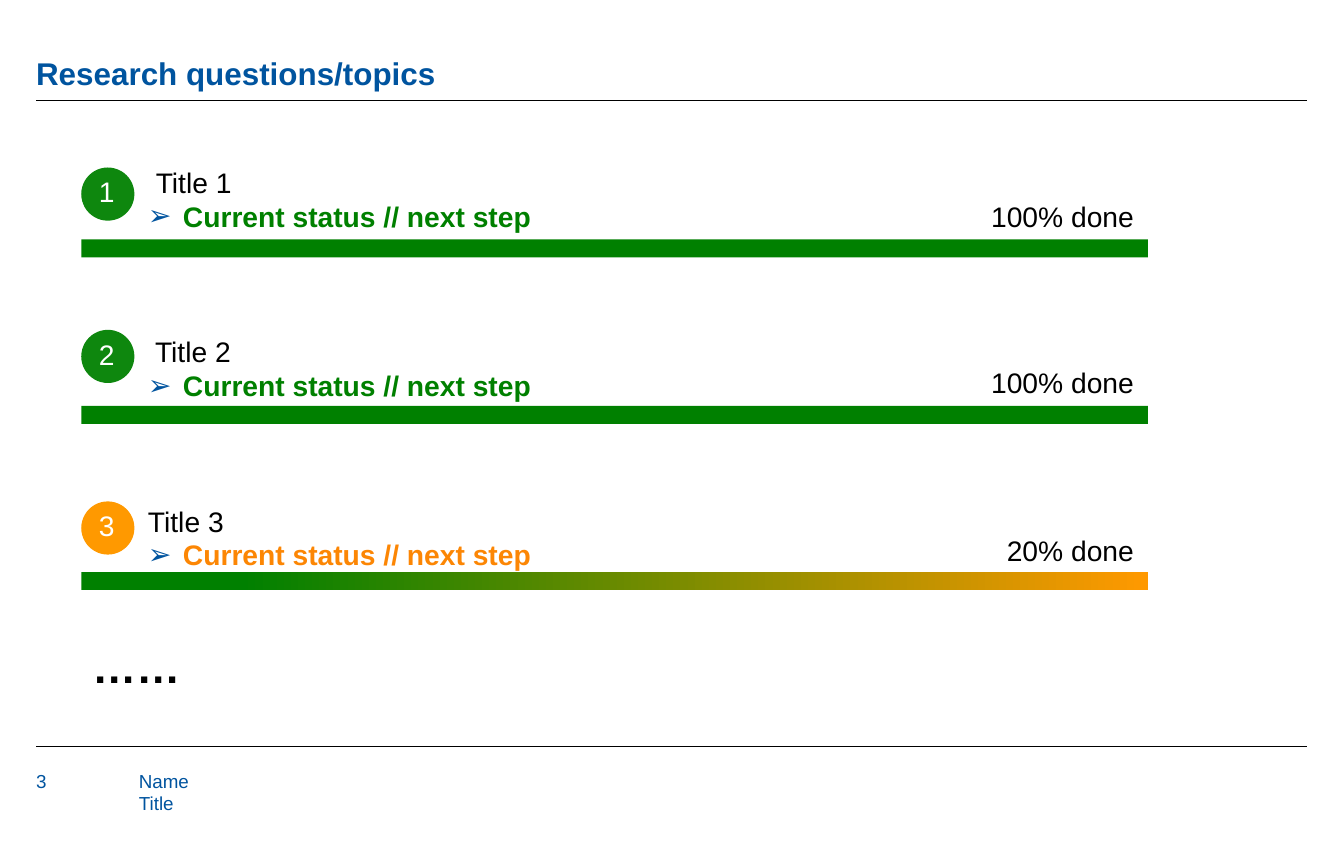
from dataclasses import dataclass

from lxml import etree
from pptx import Presentation
from pptx.dml.color import RGBColor
from pptx.enum.shapes import MSO_CONNECTOR, MSO_SHAPE
from pptx.enum.text import MSO_ANCHOR, PP_ALIGN
from pptx.oxml.ns import qn
from pptx.shapes.autoshape import Shape
from pptx.slide import Slide
from pptx.text.text import TextFrame, _Paragraph
from pptx.util import Pt

STRAIGHT = MSO_CONNECTOR.STRAIGHT
RECTANGLE, OVAL = MSO_SHAPE.RECTANGLE, MSO_SHAPE.OVAL
TOP, MIDDLE, BOTTOM = MSO_ANCHOR.TOP, MSO_ANCHOR.MIDDLE, MSO_ANCHOR.BOTTOM
LEFT, CENTER, RIGHT = PP_ALIGN.LEFT, PP_ALIGN.CENTER, PP_ALIGN.RIGHT


@dataclass(frozen=True)
class Theme:
    font: str = "Arial"
    blue: str = "00549F"
    black: str = "000000"
    white: str = "FFFFFF"
    green: str = "008000"
    badge_green: str = "0E870E"
    orange: str = "FF9900"
    status_orange: str = "FC8604"
    heading_size: float = 20
    body_size: float = 18
    ellipsis_size: float = 28
    footer_size: float = 12


THEME = Theme()


@dataclass(frozen=True)
class Box:
    left: float
    top: float
    width: float
    height: float

    def lengths(self) -> tuple[Pt, Pt, Pt, Pt]:
        return Pt(self.left), Pt(self.top), Pt(self.width), Pt(self.height)


@dataclass(frozen=True)
class Topic:
    number: int
    title: str
    title_indent: float
    status_color: str
    badge_color: str
    badge_top: float
    progress: str
    progress_top: float
    finished: bool


STATUS = "Current status // next step"
TOPICS = (
    Topic(1, "Title 1", 5, THEME.green, THEME.badge_green, 106.8, "100% done", 123.4, True),
    Topic(2, "Title 2", 4.5, THEME.green, THEME.badge_green, 210.3, "100% done", 229, True),
    Topic(3, "Title 3", 0, THEME.status_orange, THEME.orange, 319.7, "20% done", 336.2, False),
)

SLIDE_WIDTH, SLIDE_HEIGHT = 857.25, 540
CONTENT_LEFT = 51.84
MARGIN_LEFT, MARGIN_RIGHT = 23.04, 833.76
TEXT_LEFT, TEXT_TOP, TEXT_PITCH = 94.4, 105.4, 107.9
BAR_TOP, BAR_PITCH = 152.6, 106.2
BADGE_SIZE = 33.9
BULLET_INDENT = 22.3


def remove_insets(text_frame: TextFrame) -> None:
    text_frame.margin_left = text_frame.margin_right = 0
    text_frame.margin_top = text_frame.margin_bottom = 0


def format_runs(paragraph: _Paragraph, size: float, color: str, bold: bool = False) -> None:
    for run in paragraph.runs:
        run.font.name = THEME.font
        run.font.size = Pt(size)
        run.font.bold = bold
        run.font.color.rgb = RGBColor.from_string(color)


def add_text(slide: Slide, box: Box, text: str, size: float, color: str, bold: bool = False,
             align: PP_ALIGN = LEFT, anchor: MSO_ANCHOR = TOP) -> TextFrame:
    text_frame = slide.shapes.add_textbox(*box.lengths()).text_frame
    remove_insets(text_frame)
    text_frame.word_wrap = True
    text_frame.vertical_anchor = anchor
    text_frame.text = text
    for paragraph in text_frame.paragraphs:
        paragraph.alignment = align
        format_runs(paragraph, size, color, bold)
    return text_frame


def add_plain_shape(slide: Slide, kind: MSO_SHAPE, box: Box, color: str) -> Shape:
    shape = slide.shapes.add_shape(kind, *box.lengths())
    shape.shadow.inherit = False
    shape.line.fill.background()
    shape.fill.solid()
    shape.fill.fore_color.rgb = RGBColor.from_string(color)
    return shape


def add_rule(slide: Slide, top: float) -> None:
    line = slide.shapes.add_connector(STRAIGHT, Pt(MARGIN_LEFT), Pt(top), Pt(MARGIN_RIGHT), Pt(top))
    line.line.color.rgb = RGBColor.from_string(THEME.black)
    line.line.width = Pt(0.5)
    etree.SubElement(line._element.spPr, qn("a:effectLst"))


def indent(paragraph: _Paragraph, margin: float, first_line: float = 0) -> None:
    properties = paragraph._p.get_or_add_pPr()
    properties.set("marL", str(Pt(margin)))
    properties.set("indent", str(Pt(first_line)))


def add_arrow_bullet(paragraph: _Paragraph) -> None:
    indent(paragraph, BULLET_INDENT, -BULLET_INDENT)
    properties = paragraph._p.get_or_add_pPr()
    bullet_color = etree.SubElement(properties, qn("a:buClr"))
    etree.SubElement(bullet_color, qn("a:srgbClr"), val=THEME.blue)
    etree.SubElement(properties, qn("a:buFont"), typeface=THEME.font)
    etree.SubElement(properties, qn("a:buChar"), char="➢")


def add_badge(slide: Slide, topic: Topic) -> None:
    box = Box(CONTENT_LEFT, topic.badge_top, BADGE_SIZE, BADGE_SIZE)
    badge = add_plain_shape(slide, OVAL, box, topic.badge_color)
    text_frame = badge.text_frame
    remove_insets(text_frame)
    text_frame.margin_right = Pt(1.3)
    text_frame.margin_bottom = Pt(3.4)
    text_frame.word_wrap = False
    text_frame.vertical_anchor = MIDDLE
    text_frame.text = str(topic.number)
    text_frame.paragraphs[0].alignment = CENTER
    format_runs(text_frame.paragraphs[0], THEME.body_size, THEME.white)


def add_progress_bar(slide: Slide, top: float, finished: bool) -> None:
    """Draw a green bar that fades to orange while the topic is unfinished."""
    bar = add_plain_shape(slide, RECTANGLE, Box(CONTENT_LEFT, top, 680.4, 11.5), THEME.green)
    if finished:
        return
    bar.fill.gradient()
    bar.fill.gradient_angle = 0
    stops = ((0.15, THEME.green), (1, THEME.orange))
    for stop, (position, color) in zip(bar.fill.gradient_stops, stops):
        stop.position = position
        stop.color.rgb = RGBColor.from_string(color)


def add_topic(slide: Slide, row: int, topic: Topic) -> None:
    text_box = Box(TEXT_LEFT, TEXT_TOP + row * TEXT_PITCH, 480, 43)
    text_frame = add_text(slide, text_box, topic.title, THEME.body_size, THEME.black)
    indent(text_frame.paragraphs[0], topic.title_indent)
    status = text_frame.add_paragraph()
    status.text = STATUS
    add_arrow_bullet(status)
    format_runs(status, THEME.body_size, topic.status_color, bold=True)

    add_badge(slide, topic)
    add_progress_bar(slide, BAR_TOP + row * BAR_PITCH, topic.finished)
    add_text(slide, Box(607.7, topic.progress_top, 115.5, 28.8), topic.progress,
             THEME.body_size, THEME.black, align=RIGHT, anchor=MIDDLE)


def main() -> None:
    presentation = Presentation()
    presentation.slide_width, presentation.slide_height = Pt(SLIDE_WIDTH), Pt(SLIDE_HEIGHT)
    slide = presentation.slides.add_slide(presentation.slide_layouts[6])

    heading = add_text(slide, Box(MARGIN_LEFT, 16.1, 810.7, 42.5), "Research questions/topics",
                       THEME.heading_size, THEME.blue, bold=True, anchor=BOTTOM)
    heading.paragraphs[0].line_spacing = 0.9
    for top in (64.1, 476):
        add_rule(slide, top)

    for row, topic in enumerate(TOPICS):
        add_topic(slide, row, topic)
    add_text(slide, Box(59, 407.8, 120, 34), "……", THEME.ellipsis_size, THEME.black, bold=True)

    add_text(slide, Box(MARGIN_LEFT, 490.5, 64.8, 31), "3", THEME.footer_size, THEME.blue)
    add_text(slide, Box(88.6, 490.5, 532, 49.5), "Name\nTitle", THEME.footer_size, THEME.blue)
    presentation.save("out.pptx")


if __name__ == "__main__":
    main()
